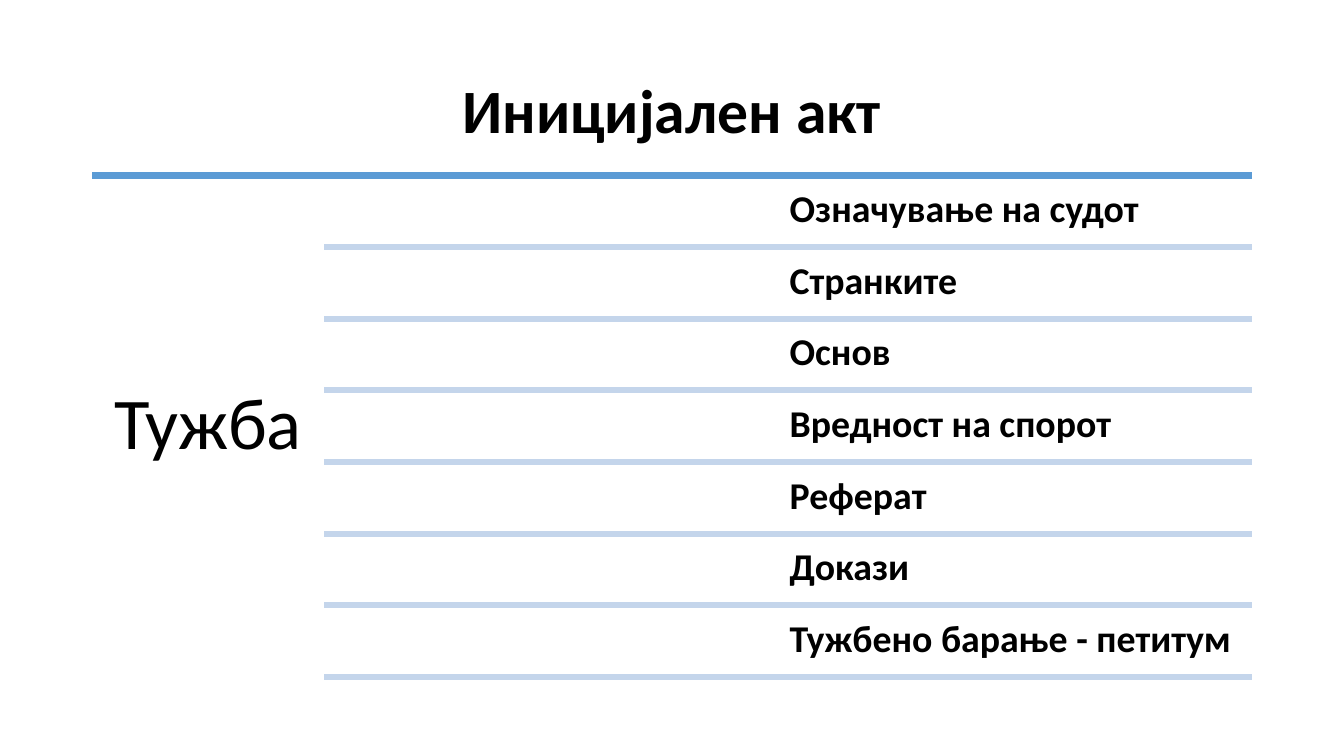
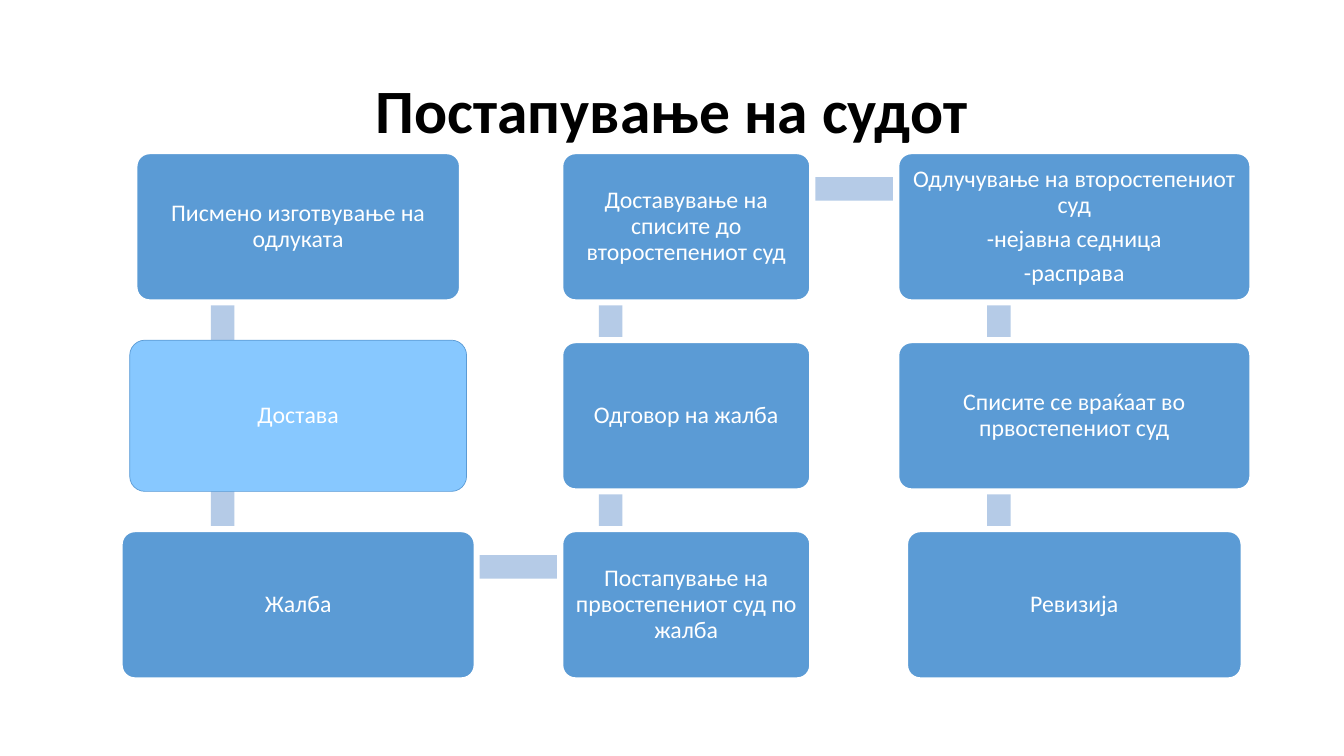
from itertools import pairwise

from lxml import etree
from pptx import Presentation
from pptx.dml.color import RGBColor
from pptx.enum.shapes import MSO_CONNECTOR, MSO_SHAPE
from pptx.enum.text import MSO_ANCHOR, PP_ALIGN
from pptx.oxml.ns import qn
from pptx.util import Inches, Pt

LEFT, CENTER = PP_ALIGN.LEFT, PP_ALIGN.CENTER
TOP, MIDDLE = MSO_ANCHOR.TOP, MSO_ANCHOR.MIDDLE
RECT, ROUNDED = MSO_SHAPE.RECTANGLE, MSO_SHAPE.ROUNDED_RECTANGLE
STRAIGHT = MSO_CONNECTOR.STRAIGHT

COLS, ROWS = 16, 9
MARGIN, CONTENT_W = 1.1, 13.8
RIGHT = MARGIN + CONTENT_W


def rgb(value):
    return RGBColor.from_string(value)


class Deck:
    FONT = "Calibri"
    BLACK, WHITE = "000000", "FFFFFF"
    BLUE, LIGHT_BLUE = "5B9BD5", "87C8FF"
    RULE, BAR = "C4D5EB", "B5CBE7"
    LINE_W = 4.33

    def __init__(self):
        self.prs = Presentation()
        self.prs.slide_width = Inches(13.33)
        self.prs.slide_height = Inches(7.5)
        self.s = None

    def x(self, cols):
        return round(self.prs.slide_width * cols / COLS)

    def y(self, rows):
        return round(self.prs.slide_height * rows / ROWS)

    def area(self, x, y, w, h):
        return self.x(x), self.y(y), self.x(w), self.y(h)

    def fill_text(self, tf, lines, size, color, align, anchor, bold=False, after=0):
        tf.word_wrap = True
        tf.vertical_anchor = anchor
        for i, line in enumerate(lines):
            p = tf.add_paragraph() if i else tf.paragraphs[0]
            p.alignment = align
            p.line_spacing = 0.9
            p.space_after = Pt(after)
            r = p.add_run()
            r.text = line
            r.font.name = self.FONT
            r.font.size = Pt(size)
            r.font.bold = bold
            r.font.color.rgb = rgb(color)

    def inset(self, tf, left, top, right, bottom):
        tf.margin_left, tf.margin_right = self.x(left), self.x(right)
        tf.margin_top, tf.margin_bottom = self.y(top), self.y(bottom)

    def slide(self, title):
        self.s = self.prs.slides.add_slide(self.prs.slide_layouts[5])
        sp = self.s.shapes.title
        sp.left, sp.top, sp.width, sp.height = self.area(MARGIN, 0.48, CONTENT_W, 1.74)
        self.fill_text(sp.text_frame, [title], 44, self.BLACK, CENTER, MIDDLE, bold=True)

    def rule(self, x, y, color):
        line = self.s.shapes.add_connector(
            STRAIGHT, self.x(x), self.y(y), self.x(RIGHT), self.y(y))
        line.line.color.rgb = rgb(color)
        line.line.width = Pt(self.LINE_W)
        etree.SubElement(line._element.spPr, qn("a:effectLst"))

    def text(self, x, y, w, h, line, size, insets, anchor=TOP, bold=False):
        tf = self.s.shapes.add_textbox(*self.area(x, y, w, h)).text_frame
        self.inset(tf, *insets)
        self.fill_text(tf, [line], size, self.BLACK, LEFT, anchor, bold)

    def shape(self, kind, x, y, w, h, fill):
        sp = self.s.shapes.add_shape(kind, *self.area(x, y, w, h))
        sp.shadow.inherit = False
        sp.fill.solid()
        sp.fill.fore_color.rgb = rgb(fill)
        sp.line.fill.background()
        return sp

    def bar(self, start, end, thickness=0.28):
        (x1, y1), (x2, y2) = start, end
        x, y = min(x1, x2), min(y1, y2)
        w, h = abs(x2 - x1), abs(y2 - y1)
        if w:
            self.shape(RECT, x, y - thickness / 2, w, thickness, self.BAR)
        else:
            self.shape(RECT, x - thickness / 2, y, thickness, h, self.BAR)

    def box(self, x, y, w, h, lines, active=False):
        sp = self.shape(ROUNDED, x, y, w, h, self.LIGHT_BLUE if active else self.BLUE)
        sp.adjustments[0] = 0.1
        sp.line.color.rgb = rgb(self.BLUE if active else self.WHITE)
        sp.line.width = Pt(0.5 if active else self.LINE_W)
        self.inset(sp.text_frame, *[0.08] * 4)
        self.fill_text(sp.text_frame, lines, 17, self.WHITE, CENTER, MIDDLE, after=6)


def claim_slide(deck):
    parts = ["Означување на судот", "Странките", "Основ", "Вредност на спорот",
             "Реферат", "Докази", "Тужбено барање - петитум"]
    top, height, list_x, text_x = 2.09, 5.97, 3.86, 4.07
    pitch = height / len(parts)

    deck.slide("Иницијален акт")
    deck.rule(MARGIN, top, deck.BLUE)
    deck.text(MARGIN, top, list_x - MARGIN, height, "Тужба", 52,
              (0.26, 0.26, 0.1, 0.26), MIDDLE)
    for i, part in enumerate(parts):
        y = top + i * pitch
        deck.text(text_x, y + 0.04, RIGHT - text_x, 0.82, part, 27,
                  (5.33, 0.13, 0.13, 0.13), bold=True)
        deck.rule(list_x, y + pitch, deck.RULE)


def procedure_slide(deck):
    steps = [
        (0, 0, 3.9, ["Писмено изготвување на одлуката"]),
        (0, 1, 4.01, ["Достава"]),
        (0, 2, 4.25, ["Жалба"]),
        (1, 2, 3, ["Постапување на првостепениот суд по жалба"]),
        (1, 1, 3, ["Одговор на жалба"]),
        (1, 0, 3, ["Доставување на списите до второстепениот суд"]),
        (2, 0, 4.24, ["Одлучување на второстепениот суд",
                      "-нејавна седница", "-расправа"]),
        (2, 1, 4.24, ["Списите се враќаат во првостепениот суд"]),
        (2, 2, 4.03, ["Ревизија"]),
    ]
    centers = [3.55 + 4.62 * i for i in range(3)]
    tops = [1.8 + 2.25 * i for i in range(3)]

    deck.slide("Постапување на судот")
    joints = [(centers[col] - 0.9, tops[row] + 0.45) for col, row, *_ in steps]
    for start, end in pairwise(joints):
        deck.bar(start, end)
    for col, row, w, lines in steps:
        deck.box(centers[col] - w / 2, tops[row], w, 1.8, lines,
                 active=(col, row) == (0, 1))


def main():
    deck = Deck()
    claim_slide(deck)
    procedure_slide(deck)
    deck.prs.save("out.pptx")


if __name__ == "__main__":
    main()
